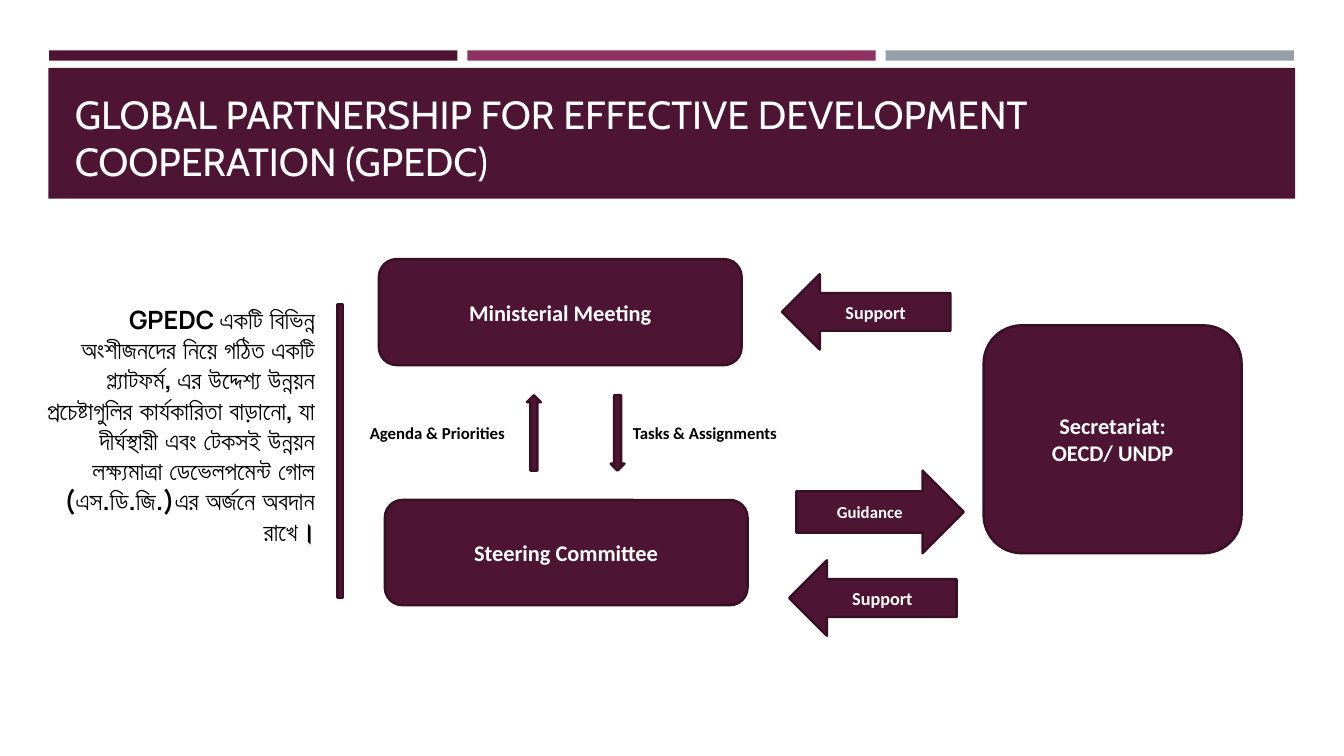
from dataclasses import dataclass
from typing import Optional

from pptx import Presentation
from pptx.dml.color import RGBColor
from pptx.enum.shapes import MSO_SHAPE
from pptx.enum.text import MSO_ANCHOR, MSO_AUTO_SIZE, PP_ALIGN
from pptx.util import Cm, Pt

PLUM = RGBColor(0x4D, 0x14, 0x34)
DARK_PLUM = RGBColor(0x39, 0x0F, 0x26)
MAGENTA = RGBColor(0x90, 0x31, 0x63)
GREY = RGBColor(0x96, 0x9F, 0xA7)
WHITE = RGBColor(0xFF, 0xFF, 0xFF)
BLACK = RGBColor(0x00, 0x00, 0x00)


@dataclass(frozen=True)
class Area:
    """Left, top, width and height in centimetres."""
    left: float
    top: float
    width: float
    height: float

    def lengths(self) -> tuple:
        return Cm(self.left), Cm(self.top), Cm(self.width), Cm(self.height)


@dataclass(frozen=True)
class Block:
    kind: MSO_SHAPE
    area: Area
    lines: tuple = ()
    size: float = 16
    fill: RGBColor = PLUM
    outline: Optional[RGBColor] = DARK_PLUM


@dataclass(frozen=True)
class Label:
    text: str
    area: Area
    align: PP_ALIGN
    size: float = 12
    font: str = "Calibri"
    anchor: MSO_ANCHOR = MSO_ANCHOR.MIDDLE


def write(shape, lines: tuple, align: PP_ALIGN, anchor: MSO_ANCHOR, font: dict, color: RGBColor) -> None:
    frame = shape.text_frame
    layout = {"word_wrap": True, "auto_size": MSO_AUTO_SIZE.NONE, "vertical_anchor": anchor}
    for name, value in layout.items():
        setattr(frame, name, value)
    for index, line in enumerate(lines):
        para = frame.add_paragraph() if index else frame.paragraphs[0]
        para.alignment = align
        span = para.add_run()
        span.text = line
        for name, value in font.items():
            setattr(span.font, name, value)
        span.font.color.rgb = color


def draw_block(page, block: Block) -> None:
    shape = page.shapes.add_shape(block.kind, *block.area.lengths())
    shape.shadow.inherit = False
    shape.fill.solid()
    shape.fill.fore_color.rgb = block.fill
    if block.outline is None:
        shape.line.fill.background()
    else:
        shape.line.color.rgb = block.outline
        shape.line.width = Pt(1.75)
    if block.lines:
        font = {"name": "Calibri", "size": Pt(block.size), "bold": True}
        write(shape, block.lines, PP_ALIGN.CENTER, MSO_ANCHOR.MIDDLE, font, WHITE)


def draw_label(page, label: Label) -> None:
    box = page.shapes.add_textbox(*label.area.lengths())
    font = {"name": label.font, "size": Pt(label.size), "bold": True}
    write(box, (label.text,), label.align, label.anchor, font, BLACK)


def draw_title(page, text: str, area: Area) -> None:
    title = page.shapes.title
    title.left, title.top, title.width, title.height = area.lengths()
    font = {"name": "Cabin", "size": Pt(28), "bold": False}
    write(title, (text,), PP_ALIGN.LEFT, MSO_ANCHOR.BOTTOM, font, WHITE)
    # Bring the title in front of its band
    page.shapes.element.append(title.element)


HEADER = [
    Block(MSO_SHAPE.RECTANGLE, Area(1.24 + 10.54 * column, 1.27, 10.29, 0.26), fill=color, outline=None)
    for column, color in enumerate((PLUM, MAGENTA, GREY))
] + [Block(MSO_SHAPE.RECTANGLE, Area(1.22, 1.71, 31.42, 3.3), outline=None)]

BODIES = [
    Block(MSO_SHAPE.FLOWCHART_ALTERNATE_PROCESS, Area(9.55, 6.53, 9.14, 2.67), ("Ministerial Meeting",)),
    Block(MSO_SHAPE.FLOWCHART_ALTERNATE_PROCESS, Area(9.7, 12.6, 9.14, 2.65), ("Steering Committee",)),
    Block(MSO_SHAPE.FLOWCHART_ALTERNATE_PROCESS, Area(24.79, 8.2, 6.5, 5.74), ("Secretariat:", "OECD/ UNDP")),
]

ARROWS = [
    Block(MSO_SHAPE.UP_ARROW, Area(13.28, 9.96, 0.35, 1.9)),
    Block(MSO_SHAPE.DOWN_ARROW, Area(15.39, 9.96, 0.35, 1.9)),
    Block(MSO_SHAPE.RIGHT_ARROW, Area(20.07, 11.86, 4.22, 2.08), ("Guidance",), 12),
    Block(MSO_SHAPE.LEFT_ARROW, Area(19.89, 14.12, 4.22, 1.9), ("Support",), 13),
    Block(MSO_SHAPE.LEFT_ARROW, Area(19.71, 6.91, 4.24, 1.9), ("Support",), 13),
]

DIVIDER = Block(MSO_SHAPE.RECTANGLE, Area(8.51, 7.67, 0.13, 7.39))

LABELS = [
    Label("Agenda & Priorities", Area(8.43, 9.96, 4.55, 1.9), PP_ALIGN.RIGHT),
    Label("Tasks & Assignments", Area(15.7, 9.96, 5.69, 1.9), PP_ALIGN.LEFT),
    Label(
        "GPEDC একটি বিভিন্ন অংশীজনদের নিয়ে গঠিত একটি প্ল্যাটফর্ম, এর উদ্দেশ্য উন্নয়ন "
        "প্রচেষ্টাগুলির কার্যকারিতা বাড়ানো, যা দীর্ঘস্থায়ী এবং টেকসই উন্নয়ন লক্ষ্যমাত্রা "
        "ডেভেলপমেন্ট গোল (এস.ডি.জি.)এর অর্জনে অবদান রাখে।",
        Area(0.84, 7.54, 7.34, 8.59), PP_ALIGN.RIGHT, 18, "Manrope", MSO_ANCHOR.TOP,
    ),
]


def main() -> None:
    deck = Presentation()
    deck.slide_width, deck.slide_height = Cm(33.87), Cm(19.05)
    page = deck.slides.add_slide(deck.slide_layouts[5])

    # Header bars, band and title
    for block in HEADER:
        draw_block(page, block)
    draw_title(
        page,
        "GLOBAL PARTNERSHIP FOR EFFECTIVE DEVELOPMENT COOPERATION (GPEDC)",
        Area(1.63, 1.96, 30.63, 2.82),
    )

    # Governance diagram and divider
    for block in [*BODIES, *ARROWS, DIVIDER]:
        draw_block(page, block)

    # Arrow captions and description
    for label in LABELS:
        draw_label(page, label)

    deck.save("out.pptx")


if __name__ == "__main__":
    main()
